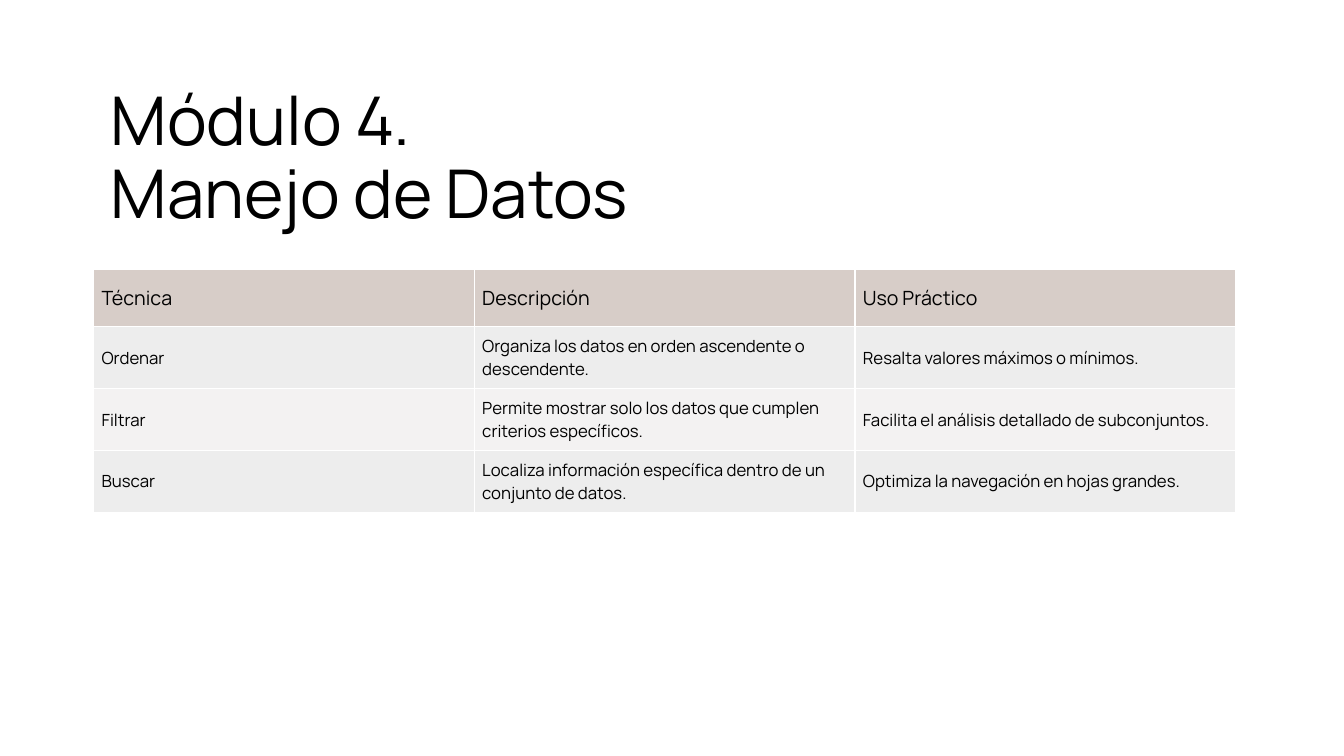
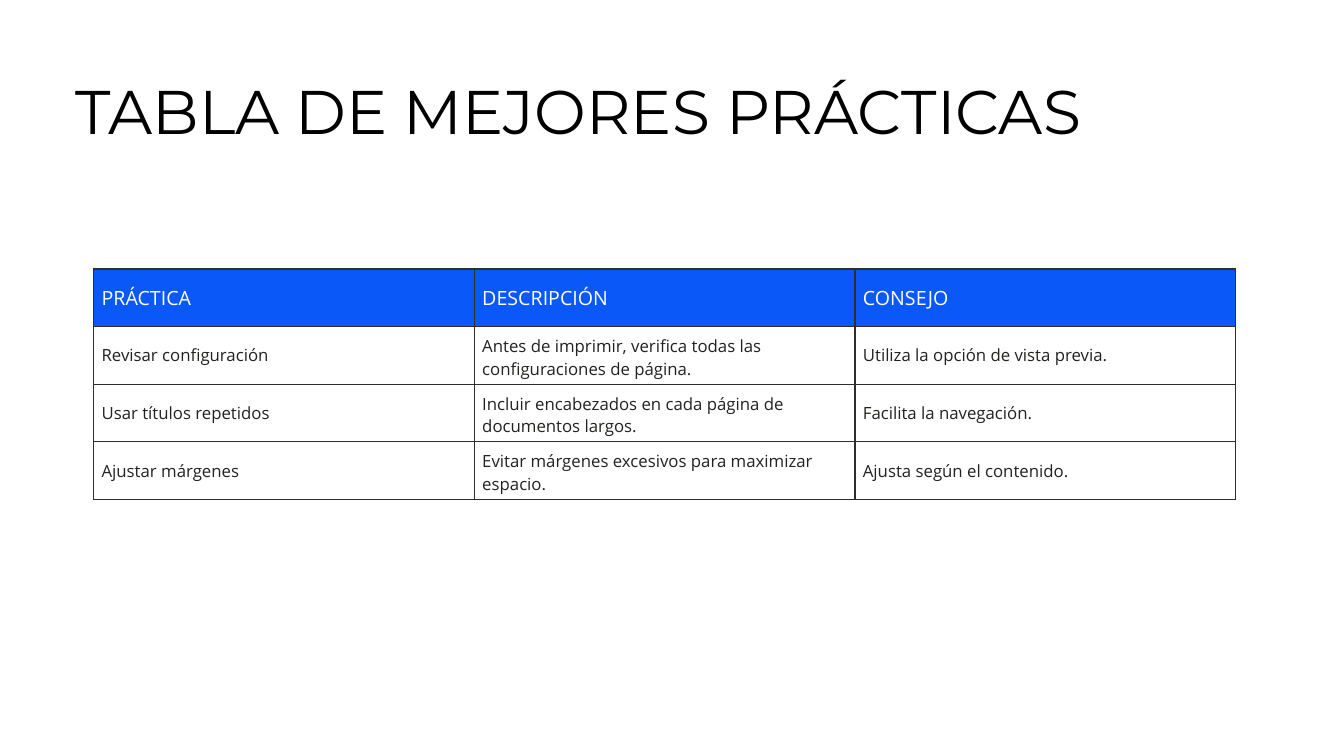
"""Build two slides, each with a title and a styled three-column table."""
from lxml.etree import SubElement as sub
from pptx import Presentation
from pptx.dml.color import RGBColor as Rgb
from pptx.enum.text import MSO_ANCHOR as Anchor
from pptx.oxml.ns import qn
from pptx.util import Cm, Pt

BLACK, WHITE = "000000", "FFFFFF"
TABLE_AREA = 2.36, 6.78, 28.78, 5.8
CELL_FORMAT = {
    "vertical_anchor": Anchor.MIDDLE,
    "margin_left": Cm(0.2),
    "margin_right": Cm(0.2),
    "margin_top": Cm(0.2),
    "margin_bottom": Cm(0.2),
}


def color(code):
    """Turn a hex string into a colour."""
    return Rgb.from_string(code)


def style(target, values):
    """Set every attribute named in a dict of format values."""
    for name, value in values.items():
        setattr(target, name, value)


class Deck:
    """Hold the shared style and the current slide."""

    def __init__(self):
        """Start an empty widescreen presentation."""
        self.show = Presentation()
        style(self.show, {"slide_width": Cm(33.87), "slide_height": Cm(19.05)})
        self.page = None

    def add_page(self):
        """Add a white blank slide and make it current."""
        self.page = self.show.slides.add_slide(self.show.slide_layouts[6])
        fill = self.page.background.fill
        fill.solid()
        fill.fore_color.rgb = color(WHITE)

    def add_text(self, para, text, font, size, ink):
        """Put one formatted run into a paragraph."""
        span = para.add_run()
        span.text = text
        style(span.font, {"name": font, "size": Pt(size)})
        span.font.color.rgb = color(ink)

    def add_title(self, lines, area, font, size, spacing):
        """Add a title with one paragraph per line."""
        box = self.page.shapes.add_textbox(*map(Cm, area))
        frame = box.text_frame
        style(frame, {"word_wrap": True, "vertical_anchor": Anchor.MIDDLE})
        for index, line in enumerate(lines):
            para = frame.add_paragraph() if index else frame.paragraphs[0]
            para.line_spacing = spacing
            self.add_text(para, line, font, size, BLACK)

    def add_border(self, cell, ink):
        """Draw a one-point line on all four sides of a cell."""
        for side in ("a:lnL", "a:lnR", "a:lnT", "a:lnB"):
            line = sub(cell._tc.get_or_add_tcPr(), qn(side), w=str(Pt(1)))
            sub(sub(line, qn("a:solidFill")), qn("a:srgbClr"), val=ink)

    def add_table(self, rows, font, head, bands, line):
        """Add a table; head and bands hold pairs of fill and text colour."""
        frame = self.page.shapes.add_table(len(rows), len(rows[0]), *map(Cm, TABLE_AREA))
        grid = frame.table
        style(grid, {"first_row": False, "horz_banding": False})
        for row, texts in enumerate(rows):
            size = 12 if row else 14
            back, ink = bands[(row - 1) % len(bands)] if row else head
            for column, text in enumerate(texts):
                cell = grid.cell(row, column)
                style(cell, CELL_FORMAT)
                self.add_border(cell, line)
                cell.fill.solid()
                cell.fill.fore_color.rgb = color(back)
                self.add_text(cell.text_frame.paragraphs[0], text, font, size, ink)


TECHNIQUES = [
    ("Técnica", "Descripción", "Uso Práctico"),
    ("Ordenar", "Organiza los datos en orden ascendente o descendente.",
     "Resalta valores máximos o mínimos."),
    ("Filtrar", "Permite mostrar solo los datos que cumplen criterios específicos.",
     "Facilita el análisis detallado de subconjuntos."),
    ("Buscar", "Localiza información específica dentro de un conjunto de datos.",
     "Optimiza la navegación en hojas grandes."),
]
PRACTICES = [
    ("PRÁCTICA", "DESCRIPCIÓN", "CONSEJO"),
    ("Revisar configuración", "Antes de imprimir, verifica todas las configuraciones de página.",
     "Utiliza la opción de vista previa."),
    ("Usar títulos repetidos", "Incluir encabezados en cada página de documentos largos.",
     "Facilita la navegación."),
    ("Ajustar márgenes", "Evitar márgenes excesivos para maximizar espacio.",
     "Ajusta según el contenido."),
]

deck = Deck()
deck.add_page()
deck.add_table(TECHNIQUES, "Manrope", ("D7CDC8", BLACK),
               [("EDEDED", BLACK), ("F3F2F2", BLACK)], WHITE)
deck.add_title(["Módulo 4.", "Manejo de Datos"], (2.54, 2.01, 29, 4.06), "Manrope", 48, 0.9)

deck.add_page()
deck.add_table(PRACTICES, "Open Sans", ("0958F7", WHITE), [(WHITE, "232220")], "2F2E2C")
deck.add_title(["TABLA DE MEJORES PRÁCTICAS"], (1.65, 1.57, 28.78, 2.64), "Montserrat", 44, 0.9)

deck.show.save("out.pptx")
